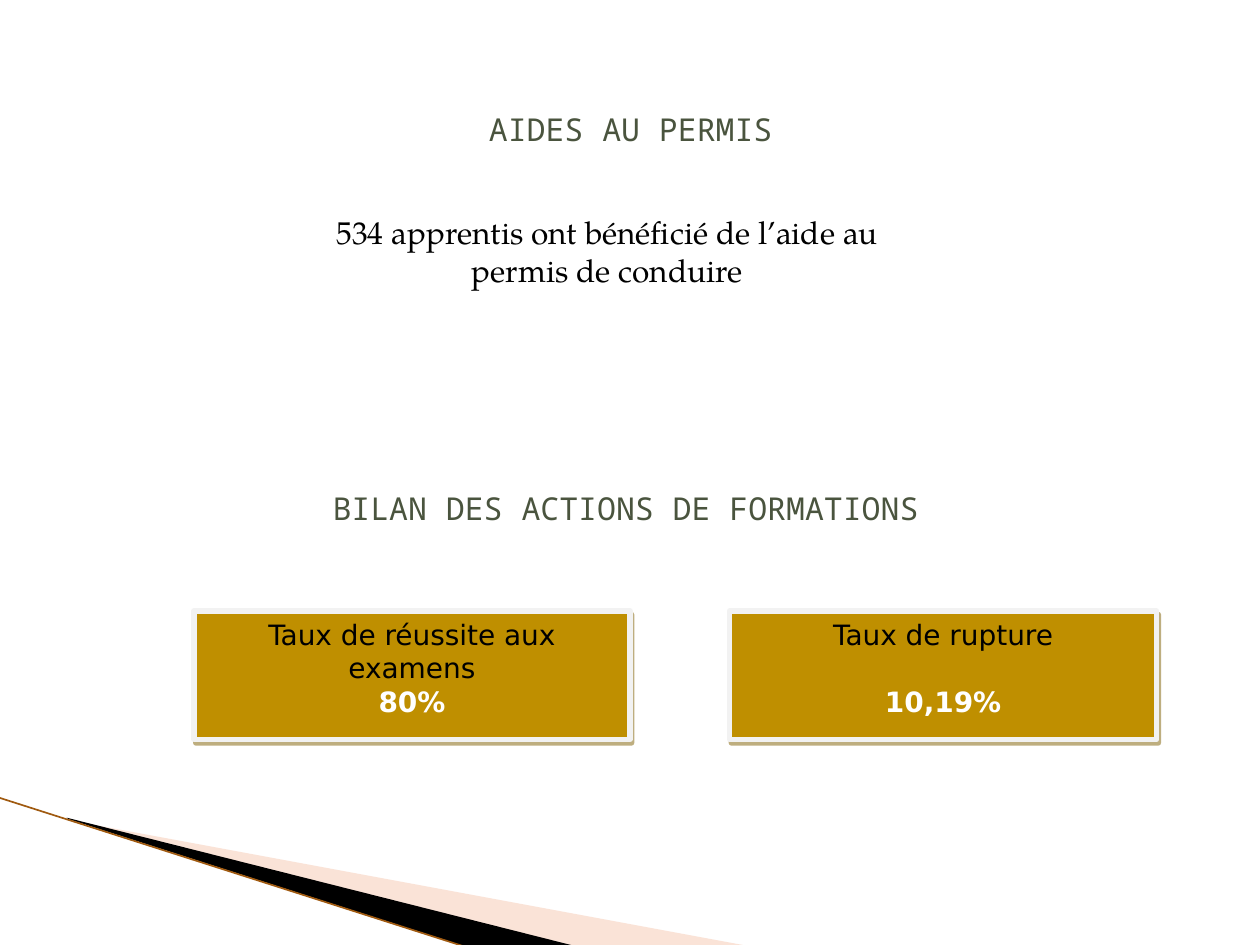
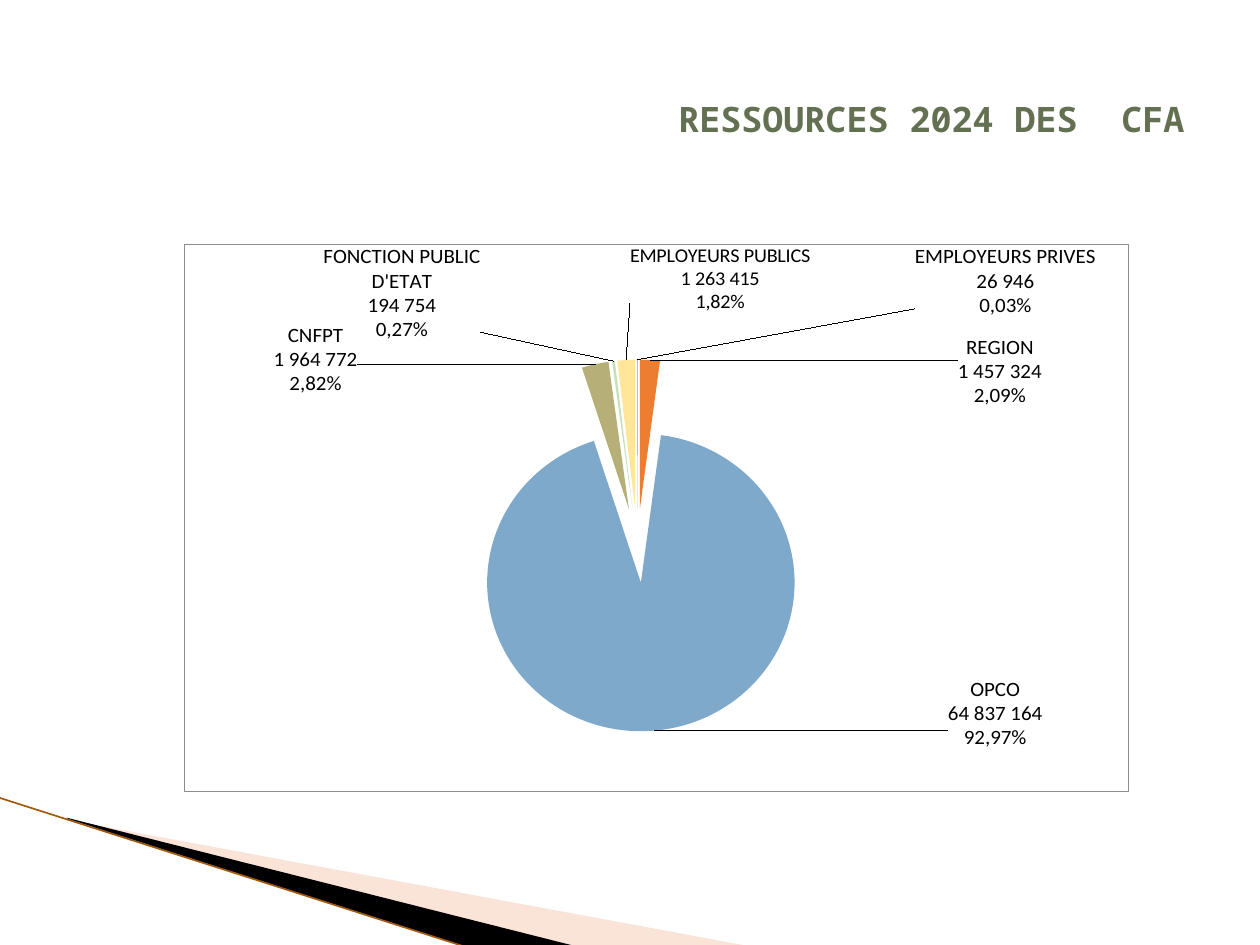
from dataclasses import dataclass

from lxml import etree
from pptx import Presentation
from pptx.chart.data import CategoryChartData
from pptx.dml.color import RGBColor
from pptx.enum.chart import XL_CHART_TYPE, XL_LABEL_POSITION
from pptx.enum.shapes import MSO_CONNECTOR, MSO_SHAPE
from pptx.enum.text import MSO_ANCHOR, MSO_AUTO_SIZE, PP_ALIGN
from pptx.oxml.ns import qn
from pptx.util import Inches, Pt

PIE, FIT = XL_CHART_TYPE.PIE, XL_LABEL_POSITION.BEST_FIT
RECT, LINE = MSO_SHAPE.RECTANGLE, MSO_CONNECTOR.STRAIGHT
TOP, MIDDLE = MSO_ANCHOR.TOP, MSO_ANCHOR.MIDDLE
CENTER, RIGHT = PP_ALIGN.CENTER, PP_ALIGN.RIGHT
NO_FIT = MSO_AUTO_SIZE.NONE
ONLY = 5  # "Title Only" layout


@dataclass(frozen=True)
class Theme:
    mono: str = "Noto Sans Mono"
    sans: str = "DejaVu Sans"
    serif: str = "TeX Gyre Pagella"
    label: str = "Calibri"
    black: str = "000000"
    white: str = "FFFFFF"
    head: str = "4A543E"
    title: str = "637052"
    gold: str = "BF8F00"
    edge: str = "F2F2F2"
    shade: str = "7F5F00"
    peach: str = "F4B99C"
    rust: str = "A05A10"
    frame: str = "8C8C8C"
    big: float = 20
    gap: float = 41
    text: float = 18
    card: float = 16
    small: float = 12
    tiny: float = 11.5


T = Theme()
INSET = 0.47  # right inset of the centred headings

# Name, rounded value, slice colour, label lines, label size,
# label shift (part of chart size)
FUNDS = [
    ("REGION", 1457000, "ED7D31",
     ["REGION", "1 457 324", "2,09%"], T.small, (0.37, 0.1)),
    ("OPCO", 64837000, "7EA9CA",
     ["OPCO", "64 837 164", "92,97%"], T.small, (0.31, -0.11)),
    ("CNFPT", 1965000, "B6B078",
     ["CNFPT", "1 964 772", "2,82%"], T.small, (-0.25, 0.07)),
    ("FONCTION PUBLIC D'ETAT", 195000, "C5E0B4",
     ["FONCTION PUBLIC D'ETAT", "194 754", "0,27%"], T.small, (-0.14, -0.04)),
    ("EMPLOYEURS PUBLICS", 1263000, "FFE699",
     ["EMPLOYEURS PUBLICS 1 263 415", "1,82%"], T.tiny, (0.1, -0.09)),
    ("EMPLOYEURS PRIVES", 27000, "006C31",
     ["EMPLOYEURS PRIVES", "26 946", "0,03%"], T.small, (0.39, -0.08)),
]


def rgb(code):
    return RGBColor.from_string(code)


def sub(node, tag, **attrs):
    return etree.SubElement(node, qn(tag), attrs)


def place(shape, box):
    shape.left, shape.top, shape.width, shape.height = map(Inches, box)


def put(para, text, face, size, color, bold=False):
    run = para.add_run()
    run.text = text
    font = run.font
    font.name, font.size, font.bold = face, Pt(size), bold
    font.color.rgb = rgb(color)


# Shared wedge at the bottom left, moved to the master
def wedge(prs, slide):
    def free(points, color):
        (x, y), *rest = [(Inches(a), Inches(b)) for a, b in points]
        path = slide.shapes.build_freeform(x, y)
        path.add_line_segments(rest, close=True)
        shape = path.convert_to_shape()
        shape.shadow.inherit = False
        shape.fill.solid()
        shape.fill.fore_color.rgb = rgb(color)
        shape.line.fill.background()
        return shape

    pale = free([(0.55, 6.51), (5.95, 7.51), (4.56, 7.51), (0.55, 6.5)], T.peach)
    tint = pale._element.spPr.find(qn("a:solidFill"))[0]
    sub(tint, "a:alpha", val="40000")
    dark = free([(0.53, 6.49), (4.57, 7.51), (3.72, 7.52), (0.54, 6.5)], T.black)
    rim = slide.shapes.add_connector(
        LINE, *map(Inches, (-0.01, 6.33, 3.71, 7.52)))
    rim.line.color.rgb = rgb(T.rust)
    rim.line.width = Pt(0.95)
    sub(rim._element.spPr, "a:effectLst")
    tree = prs.slide_master.shapes._spTree
    for spot, shape in enumerate((pale, dark, rim), 2):
        tree.insert(spot, shape._element)


def title(slide, box, align):
    shape = slide.shapes.title
    place(shape, box)
    frame = shape.text_frame
    frame.auto_size = NO_FIT
    frame.vertical_anchor = MIDDLE
    para = frame.paragraphs[0]
    para.alignment = align
    return frame, para


def note(slide, box, text, face, color):
    frame = slide.shapes.add_textbox(*map(Inches, box)).text_frame
    frame.word_wrap = True
    para = frame.paragraphs[0]
    para.alignment = CENTER
    put(para, text, face, T.text, color)
    return frame


# Gold card: a caption over a rate
def card(slide, box, name, rate, space):
    shape = slide.shapes.add_shape(RECT, *map(Inches, box))
    shape.shadow.inherit = False
    shape.fill.solid()
    shape.fill.fore_color.rgb = rgb(T.gold)
    shape.line.color.rgb = rgb(T.edge)
    shape.line.width = Pt(3)
    glow = shape._element.spPr.find(qn("a:effectLst"))
    cast = sub(glow, "a:outerShdw", blurRad="0", dist=str(Pt(2.2)),
               dir=str(63 * 60000), algn="ctr", rotWithShape="0")
    tint = sub(cast, "a:srgbClr", val=T.shade)
    sub(tint, "a:alpha", val="50000")
    frame = shape.text_frame
    frame.word_wrap = True
    frame.vertical_anchor = TOP
    top, low = frame.paragraphs[0], frame.add_paragraph()
    top.alignment = low.alignment = CENTER
    put(top, name, T.sans, T.card, T.black)
    low.space_before = Pt(space)
    put(low, rate, T.sans, T.card, T.white, True)


def shift(x, y, w=None, h=None):
    """Layout node: a shift for a label, or a full box for the plot."""
    node = etree.Element(qn("c:layout"))
    hand = sub(node, "c:manualLayout")
    if w:
        sub(hand, "c:layoutTarget", val="inner")
        sub(hand, "c:xMode", val="edge")
        sub(hand, "c:yMode", val="edge")
    for key, size in zip("xywh", (x, y, w, h)):
        if size is not None:
            sub(hand, "c:" + key, val=str(size))
    return node


# One slice with its label
def slice_up(point, color, lines, size, move):
    point.format.fill.solid()
    point.format.fill.fore_color.rgb = rgb(color)
    tag = point.data_label
    frame = tag.text_frame
    for i, line in enumerate(lines):
        para = frame.add_paragraph() if i else frame.paragraphs[0]
        para.alignment = CENTER
        put(para, line, T.label, size, T.black)
    tag.position = FIT
    node = frame._txBody.getparent().getparent()
    for old in node.findall(qn("c:layout")):
        node.remove(old)
    node.find(qn("c:idx")).addnext(shift(*move))
    for part in ("c:showVal", "c:showCatName", "c:showPercent"):
        node.find(qn(part)).set("val", "1")


def pie(slide, box):
    data = CategoryChartData()
    data.categories = [fund[0] for fund in FUNDS]
    data.add_series("Series 1", [fund[1] for fund in FUNDS])
    chart = slide.shapes.add_chart(PIE, *map(Inches, box), data).chart
    chart.has_legend = chart.has_title = False
    chart.font.name, chart.font.size = T.label, Pt(T.small)
    chart.font.color.rgb = rgb(T.black)
    plot = chart.plots[0]
    plot.vary_by_categories = True
    row = plot.series[0]
    for i, (_, _, *look) in enumerate(FUNDS):
        slice_up(row.points[i], *look)
    tags = row.data_labels
    tags.show_value = tags.show_category_name = tags.show_percentage = True

    # Pulled-out slices
    burst = etree.Element(qn("c:explosion"), val="25")
    row._element.find(qn("c:tx")).addnext(burst)

    # Plot box
    root = chart._chartSpace
    area = root.find(".//" + qn("c:plotArea"))
    for old in area.findall(qn("c:layout")):
        area.remove(old)
    area.insert(0, shift(0.11, 0.21, 0.74, 0.68))

    # White ground and thin frame
    back = etree.Element(qn("c:spPr"))
    sub(sub(back, "a:solidFill"), "a:srgbClr", val=T.white)
    edge = sub(back, "a:ln", w=str(Pt(0.5)))
    sub(sub(edge, "a:solidFill"), "a:srgbClr", val=T.frame)
    root.find(qn("c:chart")).addnext(back)


def results(slide):
    head, para = title(slide, (1.97, 0.82, 6.44, 0.4), CENTER)
    put(para, "AIDES AU PERMIS", T.mono, T.text, T.head)
    note(slide, (2.32, 1.64, 5, 0.71),
         "534 apprentis ont bénéficié de l’aide au permis de conduire",
         T.serif, T.black)
    mid = note(slide, (1.93, 3.83, 6.44, 0.4),
               "BILAN DES ACTIONS DE FORMATIONS", T.mono, T.head)
    head.margin_right = mid.margin_right = Inches(INSET)
    card(slide, (1.54, 4.85, 3.46, 1.02),
         "Taux de réussite aux examens", "80%", 0)
    card(slide, (5.79, 4.85, 3.39, 1.02), "Taux de rupture", "10,19%", 19)


def funds(slide):
    frame, para = title(slide, (0.5, 0.3, 9, 1.25), RIGHT)
    frame.margin_bottom = Inches(0.25)
    for text, size in (("RESSOURCES 2024 DES", T.big), (" ", T.gap),
                       ("CFA", T.big)):
        put(para, text, T.mono, size, T.title, True)
    pie(slide, (1.46, 1.94, 7.5, 4.49))


def main():
    prs = Presentation()
    prs.slide_width, prs.slide_height = Inches(10), Inches(7.5)
    first, second = [prs.slides.add_slide(prs.slide_layouts[ONLY])
                     for _ in range(2)]
    wedge(prs, first)
    results(first)
    funds(second)
    prs.save("out.pptx")


if __name__ == "__main__":
    main()
